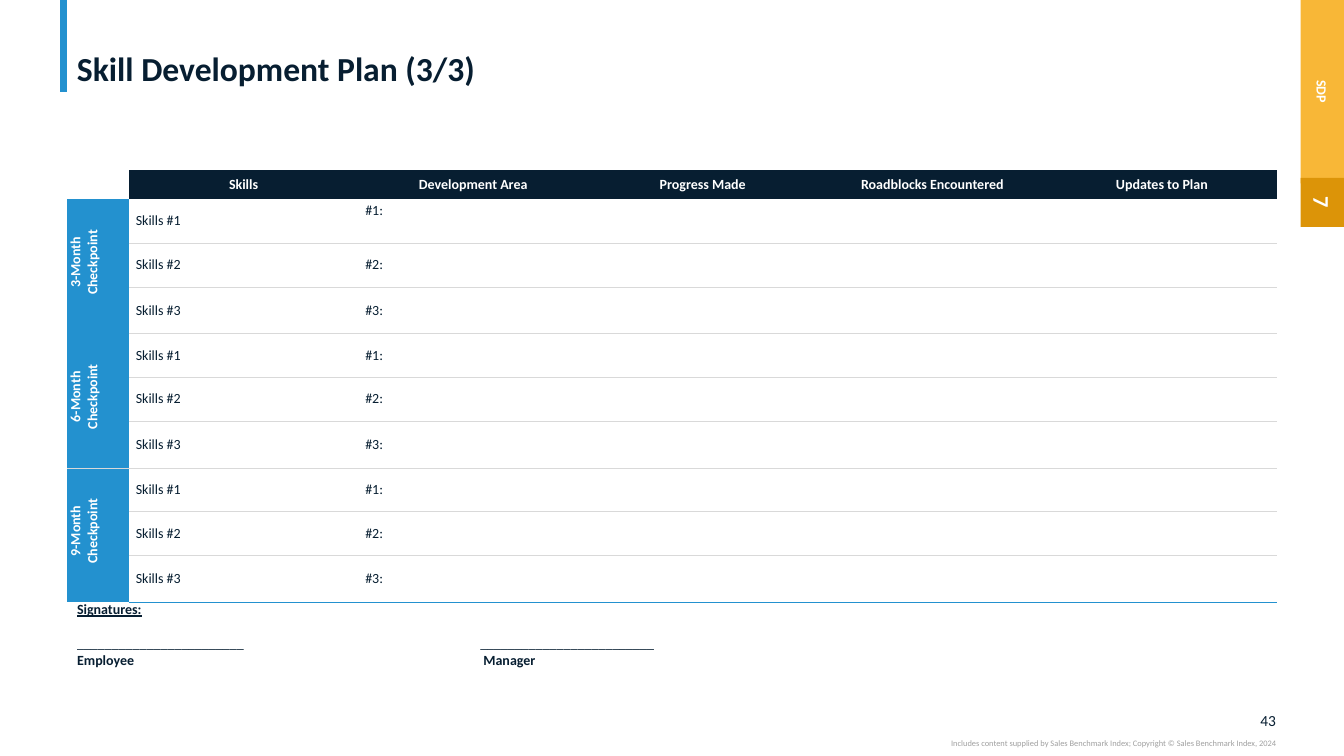
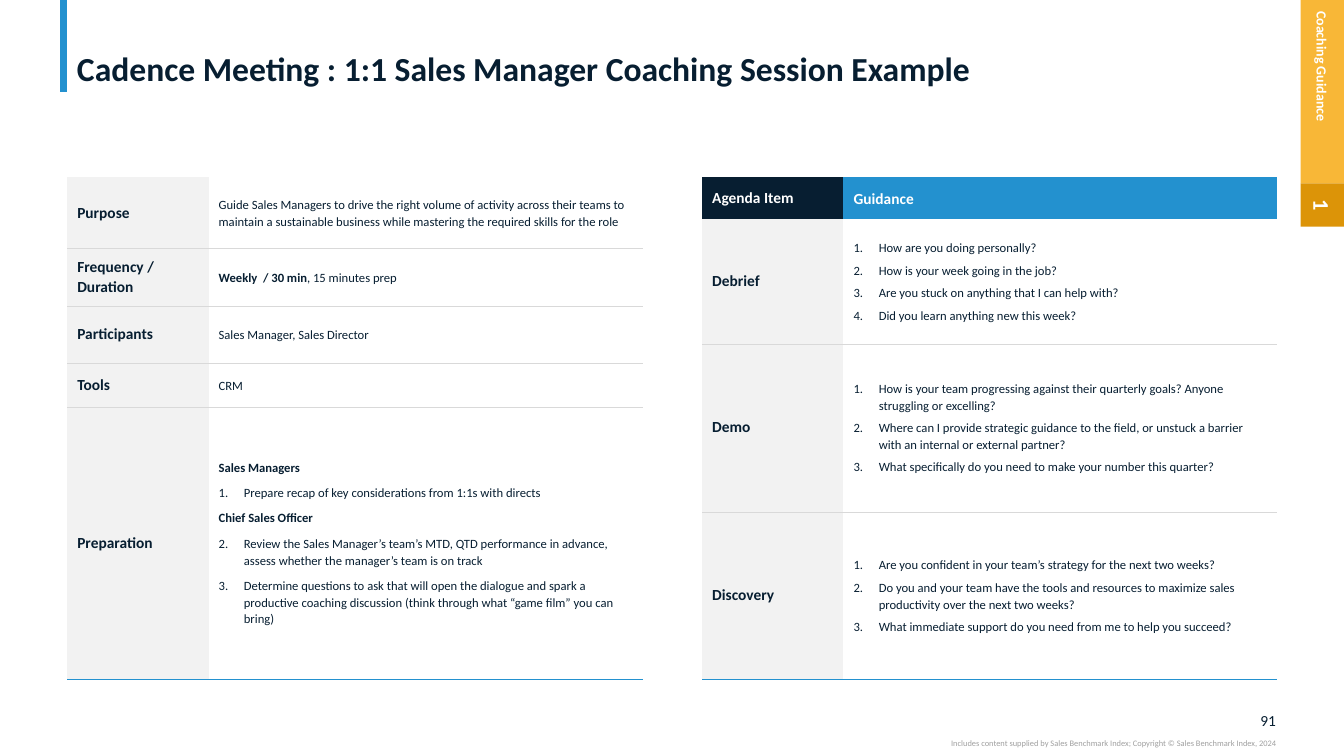
"""Build two slides: a skill development plan and a coaching session example."""
from dataclasses import dataclass

import pptx
import pptx.dml.color
import pptx.enum.shapes
import pptx.enum.text
import pptx.oxml.ns
import pptx.util
from lxml import etree

Pt = pptx.util.Pt
qn = pptx.oxml.ns.qn
ALIGN = pptx.enum.text.PP_ALIGN
ANCHOR = pptx.enum.text.MSO_ANCHOR


@dataclass(frozen=True)
class Theme:
    """Shared colours, font and type sizes."""
    font: str = "Calibri"
    navy: str = "071E31"
    blue: str = "2391CF"
    gold: str = "F8B737"
    amber: str = "DC9408"
    grey: str = "F2F2F2"
    rule: str = "D9D9D9"
    mute: str = "A0A0A0"
    white: str = "FFFFFF"
    title: int = 24
    badge: int = 16
    label: int = 11
    base: int = 10
    small: int = 9
    note: int = 6


@dataclass(frozen=True)
class Par:
    """A paragraph, with an optional list number and a plain tail."""
    text: str
    bold: bool = False
    num: int = 0
    tail: str = ""


T = Theme()
NOTE = "Includes content supplied by Sales Benchmark Index; Copyright © Sales Benchmark Index, 2024"

PLAN = {"title": "Skill Development Plan (3/3)", "page": "43", "tab": "SDP",
        "align": ALIGN.CENTER, "badge": "7", "top": 127}
HEADS = ["Skills", "Development Area", "Progress Made", "Roadblocks Encountered", "Updates to Plan"]
CHECKS = ["3-Month Checkpoint", "6-Month Checkpoint", "9-Month Checkpoint"]
STEPS = [31, 31.5, 33.5]
SIGN = ["Signatures:", "_" * 24 + "\t" + "_" * 25, "Employee\t Manager"]

COACH = {"title": "Cadence Meeting : 1:1 Sales Manager Coaching Session Example", "page": "91",
         "tab": "Coaching Guidance", "align": ALIGN.LEFT, "badge": "1", "top": 131}
BRIEF = [
    ("Purpose", 51, [Par("Guide Sales Managers to drive the right volume of activity across their teams to "
                         "maintain a sustainable business while mastering the required skills for the role")]),
    ("Frequency / Duration", 41, [Par("Weekly  / 30 min", True, tail=", 15 minutes prep")]),
    ("Participants", 41, [Par("Sales Manager, Sales Director")]),
    ("Tools", 31, [Par("CRM")]),
    ("Preparation", 195, [
        Par("Sales Managers", True),
        Par("Prepare recap of key considerations from 1:1s with directs", num=1),
        Par("Chief Sales Officer", True),
        Par("Review the Sales Manager’s team’s MTD, QTD performance in advance, "
            "assess whether the manager’s team is on track", num=2),
        Par("Determine questions to ask that will open the dialogue and spark a productive coaching "
            "discussion (think through what “game film” you can bring)", num=2),
    ]),
]
AGENDA = [
    ("Agenda Item", 30, [Par("Guidance", True)]),
    ("Debrief", 89, [Par(text, num=1) for text in (
        "How are you doing personally?",
        "How is your week going in the job?",
        "Are you stuck on anything that I can help with?",
        "Did you learn anything new this week?")]),
    ("Demo", 120, [Par(text, num=1) for text in (
        "How is your team progressing against their quarterly goals? Anyone struggling or excelling?",
        "Where can I provide strategic guidance to the field, or unstuck a barrier "
        "with an internal or external partner?",
        "What specifically do you need to make your number this quarter?")]),
    ("Discovery", 120, [Par(text, num=1) for text in (
        "Are you confident in your team’s strategy for the next two weeks?",
        "Do you and your team have the tools and resources to maximize sales "
        "productivity over the next two weeks?",
        "What immediate support do you need from me to help you succeed?")]),
]


def tint(name):
    """Turn a hex name into a colour."""
    return pptx.dml.color.RGBColor.from_string(name)


def style(para, size, color=T.navy, bold=False, align=ALIGN.LEFT):
    """Set the font and alignment of a paragraph."""
    para.alignment = align
    font = para.font
    font.name, font.size, font.bold = T.font, Pt(size), bold
    font.color.rgb = tint(color)


def pad(box, side, edge):
    """Set the insets of a cell or text frame."""
    box.margin_left = box.margin_right = Pt(side)
    box.margin_top = box.margin_bottom = Pt(edge)


def label(frame, text, size, **look):
    """Write one styled paragraph."""
    para = frame.paragraphs[0]
    para.text = text
    style(para, size, **look)
    return para


def number(para, start):
    """Give a paragraph a hanging list number."""
    prop = para._p.get_or_add_pPr()
    prop.set("marL", str(Pt(18)))
    prop.set("indent", str(-Pt(18)))
    mark = etree.SubElement(prop, qn("a:buAutoNum"), type="arabicPeriod")
    if start > 1:
        mark.set("startAt", str(start))


def write(frame, pars, gap, size, color):
    """Write a list of paragraphs with equal gaps."""
    for i, par in enumerate(pars):
        para = frame.paragraphs[0] if i == 0 else frame.add_paragraph()
        if par.num:
            number(para, par.num)
        run = para.add_run()
        run.text = par.text
        para.line_spacing = 1.1
        if i:
            para.space_before = Pt(gap)
        style(para, size, color, par.bold and not par.tail)
        if par.tail:
            run.font.bold = par.bold
            para.add_run().text = par.tail


def text_box(slide, left, top, wide, high):
    """Add an empty wrapping text box and return its frame."""
    frame = slide.shapes.add_textbox(Pt(left), Pt(top), Pt(wide), Pt(high)).text_frame
    frame.word_wrap = True
    return frame


def side_tab(slide, top, high, fill, text, size, align):
    """Add a block on the right edge with text turned to read downward."""
    wide, mid = 31, 944.5
    shape = slide.shapes.add_shape(pptx.enum.shapes.MSO_SHAPE.RECTANGLE, Pt(mid - high / 2),
                                   Pt(top + high / 2 - wide / 2), Pt(high), Pt(wide))
    shape.rotation = 90
    shape.shadow.inherit = False
    shape.fill.solid()
    shape.fill.fore_color.rgb = tint(fill)
    shape.line.fill.background()
    frame = shape.text_frame
    frame.vertical_anchor = ANCHOR.MIDDLE
    pad(frame, 8 if size == T.base else 7, 4)
    label(frame, text, size, color=T.white, bold=True, align=align)


def new_slide(deck, info):
    """Add a slide with the shared title, bar, footer and side tab."""
    slide = deck.slides.add_slide(deck.slide_layouts[5])
    bar = slide.shapes.add_connector(pptx.enum.shapes.MSO_CONNECTOR.STRAIGHT,
                                     Pt(45.5), Pt(0), Pt(45.5), Pt(66))
    bar.line.color.rgb = tint(T.blue)
    bar.line.width = Pt(5)
    etree.SubElement(bar._element.spPr, qn("a:effectLst"))

    title = slide.shapes.title
    title.left, title.top, title.width, title.height = Pt(48), Pt(3), Pt(863), Pt(60.5)
    frame = title.text_frame
    frame.auto_size = pptx.enum.text.MSO_AUTO_SIZE.NONE
    frame.vertical_anchor = ANCHOR.BOTTOM
    pad(frame, 7, 0)
    label(frame, info["title"], T.title, bold=True).line_spacing = 0.9

    for text, top, high, size, color in ((info["page"], 508, 13.5, T.label, T.navy),
                                         (NOTE, 527, 7, T.note, T.mute)):
        foot = text_box(slide, 540, top, 371.5, high)
        pad(foot, 0, 0)
        label(foot, text, size, color=color, align=ALIGN.RIGHT)

    side_tab(slide, 0, 131, T.gold, info["tab"], T.base, info["align"])
    side_tab(slide, info["top"], 162 - info["top"], T.amber, info["badge"], T.badge, ALIGN.CENTER)
    return slide


def grid(slide, left, top, cols, rows):
    """Add a table with plain style and given sizes."""
    table = slide.shapes.add_table(len(rows), len(cols), Pt(left), Pt(top),
                                   Pt(sum(cols)), Pt(sum(rows))).table
    table.first_row = table.horz_banding = False
    for part, size in zip(table.columns, cols):
        part.width = Pt(size)
    for part, size in zip(table.rows, rows):
        part.height = Pt(size)
    return table


def dress(cell, fill=None, over=None, under=None):
    """Set cell borders, fill and anchor; a border is a colour and width."""
    prop = cell._tc.get_or_add_tcPr()
    for side, edge in (("L", None), ("R", None), ("T", over), ("B", under)):
        line = etree.SubElement(prop, qn("a:ln" + side))
        if edge:
            line.set("w", str(Pt(edge[1])))
            solid = etree.SubElement(line, qn("a:solidFill"))
            etree.SubElement(solid, qn("a:srgbClr"), val=edge[0])
        else:
            etree.SubElement(line, qn("a:noFill"))
    if fill:
        cell.fill.solid()
        cell.fill.fore_color.rgb = tint(fill)
    else:
        cell.fill.background()
    cell.vertical_anchor = ANCHOR.MIDDLE


def plan_table(slide):
    """Add the checkpoint table."""
    rows = [21] + STEPS * len(CHECKS)
    table = grid(slide, 48, 121.5, [44] + [164] * len(HEADS), rows)
    thin, last = (T.rule, 0.5), len(rows) - 1
    for r in range(len(rows)):
        step = (r - 1) % len(STEPS) + 1
        for c in range(len(HEADS) + 1):
            cell = table.cell(r, c)
            pad(cell, 5, 0)
            style(cell.text_frame.paragraphs[0], T.base)
            if r == 0:
                dress(cell, T.navy if c else None)
                if c:
                    label(cell.text_frame, HEADS[c - 1], T.base, color=T.white, bold=True, align=ALIGN.CENTER)
            elif c == 0:
                ends = step == len(STEPS) and r < last
                dress(cell, T.blue, thin if step == 1 and r > 1 else None, thin if ends else None)
            else:
                dress(cell, None, thin if r > 1 else None, (T.blue, 1) if r == last else thin)
                if c < 3:
                    label(cell.text_frame, f"Skills #{step}" if c == 1 else f"#{step}:", T.base)
    first = table.cell(1, 2)
    first.vertical_anchor = ANCHOR.TOP
    first.margin_top = Pt(2)
    for i, text in enumerate(CHECKS):
        top = 1 + i * len(STEPS)
        cell = table.cell(top, 0)
        cell.merge(table.cell(top + len(STEPS) - 1, 0))
        cell._tc.get_or_add_tcPr().set("vert", "vert270")
        para = label(cell.text_frame, text, T.base, color=T.white, bold=True, align=ALIGN.CENTER)
        para._p.get_or_add_pPr().set("marL", str(Pt(6)))


def sign_box(slide):
    """Add the signature lines."""
    frame = text_box(slide, 48, 425.5, 826, 55.5)
    for i, text in enumerate(SIGN):
        para = frame.paragraphs[0] if i == 0 else frame.add_paragraph()
        tabs = etree.SubElement(para._p.get_or_add_pPr(), qn("a:tabLst"))
        etree.SubElement(tabs, qn("a:tab"), pos=str(Pt(288)), algn="l")
        para.add_run().text = text
        style(para, T.base, bold=i != 1)
        para.font.underline = i == 0
        if i == 1:
            para.space_before = Pt(12)


def guide_table(slide, left, items, gap, head=False):
    """Add a two-column table of labels and guidance."""
    table = grid(slide, left, 126.5, [101, 310], [item[1] for item in items])
    thin, over = (T.rule, 0.25), None
    for r, (name, _, pars) in enumerate(items):
        top = head and r == 0
        under = None if top else (T.blue, 1) if r == len(items) - 1 else thin
        key, body = table.cell(r, 0), table.cell(r, 1)
        dress(key, T.navy if top else T.grey, over, under)
        dress(body, T.blue if top else None, over, under)
        color = T.white if top else T.navy
        label(key.text_frame, name, T.label, color=color, bold=True)
        write(body.text_frame, pars, gap, T.label if top else T.small, color)
        over = under


def main():
    """Build and save the deck."""
    deck = pptx.Presentation()
    deck.slide_width, deck.slide_height = Pt(960), Pt(540)
    plan = new_slide(deck, PLAN)
    plan_table(plan)
    sign_box(plan)
    coach = new_slide(deck, COACH)
    guide_table(coach, 48, BRIEF, 6)
    guide_table(coach, 501.5, AGENDA, 4, head=True)
    deck.save("out.pptx")


if __name__ == "__main__":
    main()
